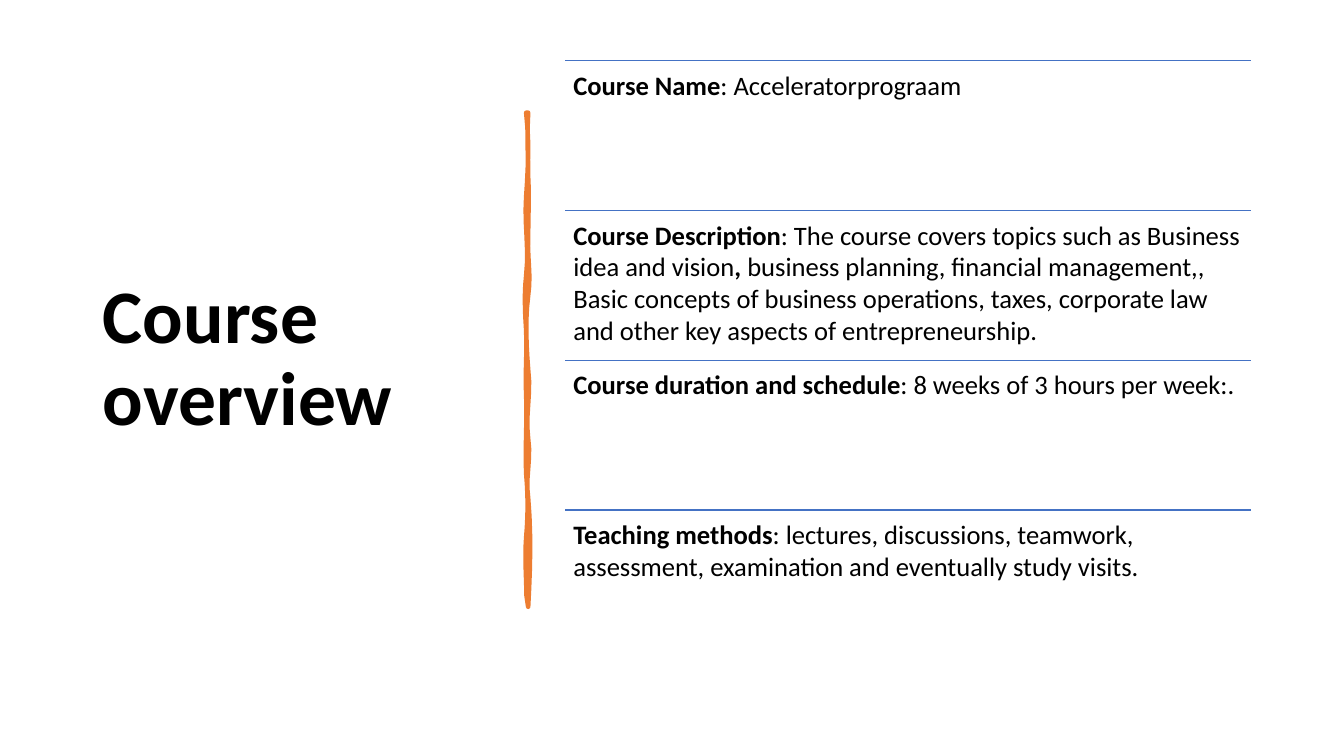
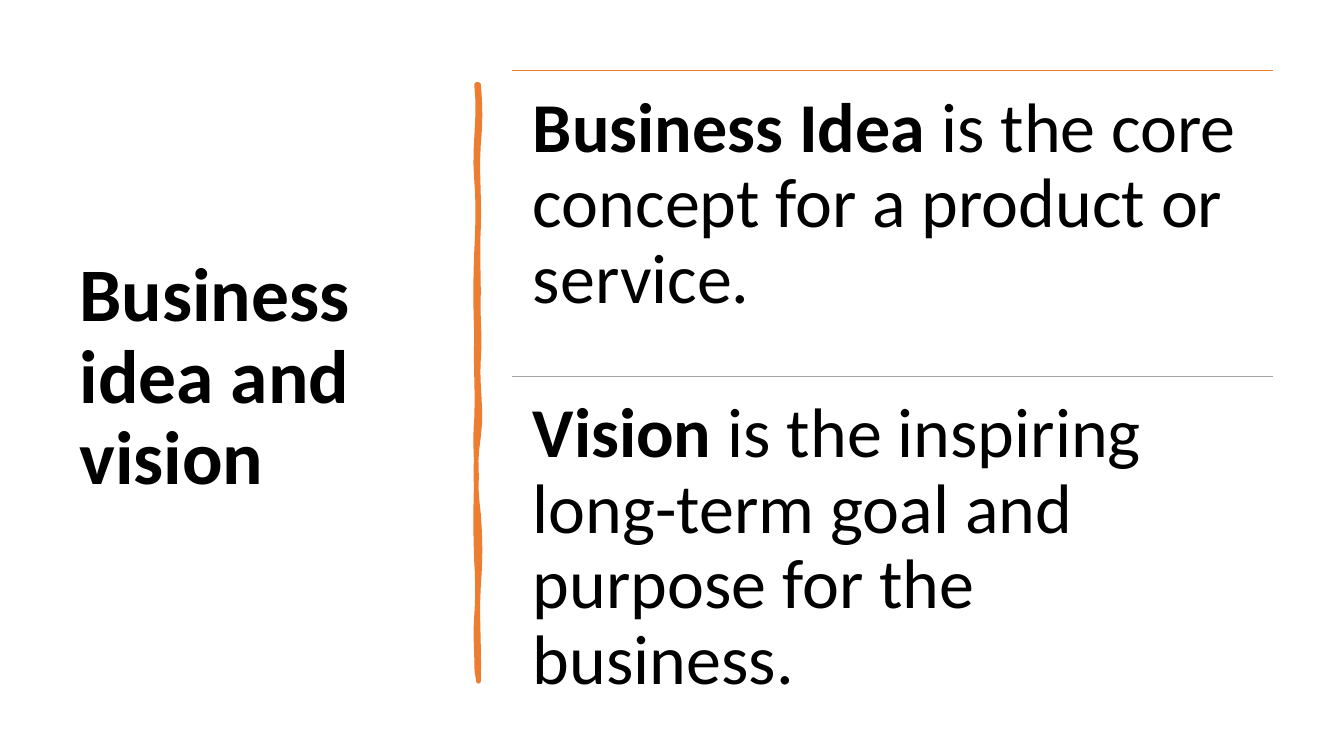
from dataclasses import dataclass

from lxml.etree import SubElement
from pptx import Presentation
from pptx.dml.color import RGBColor
from pptx.enum.shapes import MSO_CONNECTOR
from pptx.enum.text import MSO_ANCHOR, MSO_AUTO_SIZE, PP_ALIGN
from pptx.oxml.ns import qn
from pptx.util import Cm, Pt


@dataclass(frozen=True)
class Theme:
    """Colours, font and sizes shared by the slides."""

    font: str = "Calibri"
    ink: RGBColor = RGBColor(0x00, 0x00, 0x00)
    orange: RGBColor = RGBColor(0xED, 0x7D, 0x31)
    blue: RGBColor = RGBColor(0x44, 0x72, 0xC4)
    grey: RGBColor = RGBColor(0xA5, 0xA5, 0xA5)
    title_size: float = 54
    detail_size: float = 19
    statement_size: float = 50
    bar_line: float = 3.25
    rule_line: float = 1
    tight: float = 0.9


@dataclass(frozen=True)
class Box:
    """A region in centimetres."""

    left: float
    top: float
    width: float
    height: float

    def lengths(self):
        """Return the region as lengths."""
        return Cm(self.left), Cm(self.top), Cm(self.width), Cm(self.height)

    def rows(self, count):
        """Split the region into equal rows."""
        height = self.height / count
        return [Box(self.left, self.top + index * height, self.width, height)
                for index in range(count)]


@dataclass(frozen=True)
class RowStyle:
    """Look of the ruled rows on one slide."""

    size: float
    inset: float
    spacing: float
    rules: tuple


THEME = Theme()
CURVE_STEPS = 6


def format_span(span, size, bold):
    """Apply the shared font to one run."""
    span.font.name = THEME.font
    span.font.size = Pt(size)
    span.font.bold = bold
    span.font.color.rgb = THEME.ink


def add_title(page, box, text):
    """Place the title placeholder in its box."""
    title = page.shapes.title
    title.left, title.top, title.width, title.height = box.lengths()
    frame = title.text_frame
    frame.text = text
    frame.auto_size = MSO_AUTO_SIZE.NONE
    frame.vertical_anchor = MSO_ANCHOR.MIDDLE
    para = frame.paragraphs[0]
    para.alignment = PP_ALIGN.LEFT
    para.line_spacing = THEME.tight
    format_span(para.runs[0], THEME.title_size, True)


def edge_points(box, side, start, bends):
    """Sample one wavy edge; bends hold end percent and two sways in tenths of a millimetre."""
    points = []
    for end, first, second in bends:
        for step in range(1, CURVE_STEPS + 1):
            t = step / CURVE_STEPS
            sway = 3 * t * (1 - t) * ((1 - t) * first + t * second)
            percent = start + (end - start) * t
            points.append((Cm(side + sway / 100),
                           Cm(box.top + box.height * percent / 100)))
        start = end
    return points


def add_brush_bar(page, box, right_bends, left_bends):
    """Draw the hand-drawn vertical bar inside its box."""
    right = box.left + box.width
    outline = (edge_points(box, right, 0, right_bends)
               + edge_points(box, box.left, 100, left_bends))
    builder = page.shapes.build_freeform(Cm(right), Cm(box.top))
    builder.add_line_segments(outline, close=True)
    bar = builder.convert_to_shape()
    bar.shadow.inherit = False
    bar.fill.solid()
    bar.fill.fore_color.rgb = THEME.orange
    bar.line.color.rgb = THEME.orange
    bar.line.width = Pt(THEME.bar_line)
    SubElement(bar.line._get_or_add_ln(), qn("a:round"))


def add_rule(page, box, color):
    """Draw a line along the top of a box."""
    left, top, width, _ = box.lengths()
    rule = page.shapes.add_connector(MSO_CONNECTOR.STRAIGHT, left, top, left + width, top)
    rule.line.color.rgb = color
    rule.line.width = Pt(THEME.rule_line)
    SubElement(rule._element.spPr, qn("a:effectLst"))


def add_row(page, box, spans, style):
    """Write one row, alternating bold and regular runs."""
    frame = page.shapes.add_textbox(*box.lengths()).text_frame
    frame.word_wrap = True
    frame.margin_left = frame.margin_right = Cm(style.inset)
    frame.margin_top = frame.margin_bottom = Cm(style.inset)
    para = frame.paragraphs[0]
    para.line_spacing = style.spacing
    for index, text in enumerate(spans):
        span = para.add_run()
        span.text = text
        format_span(span, style.size, index % 2 == 0)


def add_ruled_rows(page, box, rows, style):
    """Fill a box with equal rows, each under its rule."""
    for row_box, spans, color in zip(box.rows(len(rows)), rows, style.rules):
        add_rule(page, row_box, color)
        add_row(page, row_box, spans, style)


def add_page(deck, title, title_box):
    """Add a title-only slide."""
    page = deck.slides.add_slide(deck.slide_layouts[5])
    add_title(page, title_box, title)
    return page


def add_overview(deck):
    """Build the course overview slide."""
    page = add_page(deck, "Course overview", Box(2.34, 1.52, 10, 15.1))
    add_brush_bar(
        page, Box(13.26, 2.84, 0.05, 12.45),
        [(13, -3, 0), (25, 3, 0), (37, -3, 8), (52, -8, -5),
         (66, 8, -8), (78, 8, -8), (100, 8, 5)],
        [(86, 3, -5), (73, 5, 5), (57, -3, 3), (44, -3, 3),
         (33, -3, -5), (17, 8, -5), (0, 5, 8)])
    rows = [
        ("Course Name", ": Acceleratorprograam"),
        ("Course Description",
         ": The course covers topics such as Business idea and vision", ", ",
         "business planning, financial management,, Basic concepts of business "
         "operations, taxes, corporate law and other key aspects of entrepreneurship."),
        ("Course duration and schedule", ": 8 weeks of 3 hours per week:."),
        ("Teaching methods",
         ": lectures, discussions, teamwork, assessment, examination and "
         "eventually study visits."),
    ]
    style = RowStyle(THEME.detail_size, 0.2, 1.0, (THEME.blue,) * len(rows))
    add_ruled_rows(page, Box(14.25, 1.53, 17.28, 15.1), rows, style)


def add_idea_and_vision(deck):
    """Build the business idea and vision slide."""
    page = add_page(deck, "Business idea and vision", Box(1.75, 1.78, 9.5, 15.52))
    add_brush_bar(
        page, Box(12.01, 2.13, 0.05, 15.04),
        [(10, 5, 5), (24, -5, 3), (35, -3, 0), (46, -3, 5),
         (59, -5, 10), (72, -10, -8), (84, 5, 5), (100, -5, 3)],
        [(89, 3, -5), (80, 3, 3), (66, -3, -3), (56, 0, -5),
         (42, 3, -3), (28, -3, -3), (16, 3, 5), (0, -8, 10)])
    rows = [
        ("Business Idea", " is the core concept for a product or service."),
        ("Vision", " is the inspiring long-term goal and purpose for the business."),
    ]
    style = RowStyle(THEME.statement_size, 0.53, THEME.tight, (THEME.orange, THEME.grey))
    add_ruled_rows(page, Box(12.9, 1.78, 19.18, 15.4), rows, style)


def main():
    """Build and save the deck."""
    deck = Presentation()
    deck.slide_width, deck.slide_height = Cm(33.87), Cm(19.05)
    add_overview(deck)
    add_idea_and_vision(deck)
    deck.save("out.pptx")


if __name__ == "__main__":
    main()
